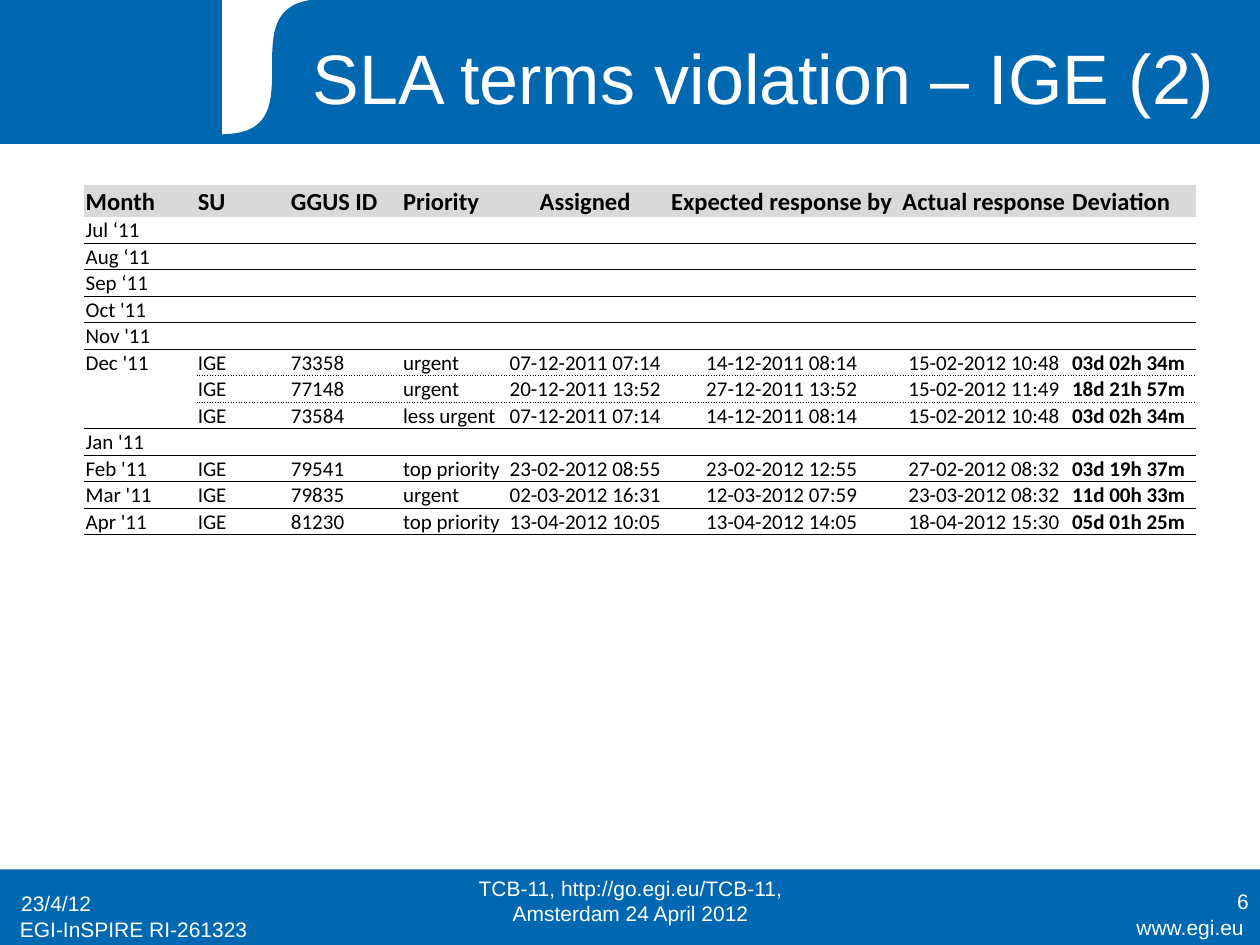
import pptx
import pptx.dml.color
import pptx.enum.text
import pptx.oxml.ns
import pptx.util
from lxml import etree
from pptx.enum.shapes import MSO_SHAPE
from pptx.util import Inches

BLUE = pptx.dml.color.RGBColor(0x00, 0x67, 0xB1)
WHITE = pptx.dml.color.RGBColor(0xFF, 0xFF, 0xFF)
BLACK = pptx.dml.color.RGBColor(0x00, 0x00, 0x00)
GREY = pptx.dml.color.RGBColor(0xD9, 0xD9, 0xD9)

ALIGN = pptx.enum.text.PP_ALIGN
ANCHOR = pptx.enum.text.MSO_ANCHOR
NO_STYLE = "{2D5ABB26-0587-4C30-8999-92F81FD0307C}"

COLUMN_WIDTHS = [0.89, 0.74, 0.89, 0.81, 1.29, 1.83, 1.38, 0.99]
CENTRED_COLUMNS = (4, 5, 6)
DEVIATION_COLUMN = 7
DOTTED_ROWS = (6, 7)  # rows of December that another ticket follows
VIOLATIONS = [
    ["Month", "SU", "GGUS ID", "Priority", "Assigned",
     "Expected response by", "Actual response", "Deviation"],
    ["Jul ‘11"],
    ["Aug ‘11"],
    ["Sep ‘11"],
    ["Oct '11"],
    ["Nov '11"],
    ["Dec '11", "IGE", "73358", "urgent", "07-12-2011 07:14",
     "14-12-2011 08:14", "15-02-2012 10:48", "03d 02h 34m"],
    ["", "IGE", "77148", "urgent", "20-12-2011 13:52",
     "27-12-2011 13:52", "15-02-2012 11:49", "18d 21h 57m"],
    ["", "IGE", "73584", "less urgent", "07-12-2011 07:14",
     "14-12-2011 08:14", "15-02-2012 10:48", "03d 02h 34m"],
    ["Jan '11"],
    ["Feb '11", "IGE", "79541", "top priority", "23-02-2012 08:55",
     "23-02-2012 12:55", "27-02-2012 08:32", "03d 19h 37m"],
    ["Mar '11", "IGE", "79835", "urgent", "02-03-2012 16:31",
     "12-03-2012 07:59", "23-03-2012 08:32", "11d 00h 33m"],
    ["Apr '11", "IGE", "81230", "top priority", "13-04-2012 10:05",
     "13-04-2012 14:05", "18-04-2012 15:30", "05d 01h 25m"],
]


def paint(shape, color):
    shape.shadow.inherit = False
    shape.fill.solid()
    shape.fill.fore_color.rgb = color
    shape.line.color.rgb = color
    shape.line.width = pptx.util.Pt(0.75)


def add_band(slide, left, top, width, height, color):
    band = slide.shapes.add_shape(
        MSO_SHAPE.RECTANGLE, Inches(left), Inches(top), Inches(width), Inches(height))
    paint(band, color)
    return band


def bezier(start, control1, control2, end, steps=40):
    for step in range(1, steps + 1):
        t = step / steps
        weights = ((1 - t) ** 3, 3 * t * (1 - t) ** 2, 3 * t ** 2 * (1 - t), t ** 3)
        yield tuple(sum(w * p[axis] for w, p in zip(weights, (start, control1, control2, end)))
                    for axis in (0, 1))


def add_header_curve(slide):
    left, right, bottom = 1.77, 3.74, 1.07
    curve = bezier((left, bottom), (2.56, bottom), (left, 0), (2.56, 0))
    outline = [(right, bottom), (left, bottom), *curve]
    builder = slide.shapes.build_freeform(Inches(right), 0, scale=1)
    builder.add_line_segments([(Inches(x), Inches(y)) for x, y in outline], close=True)
    paint(builder.convert_to_shape(), BLUE)


def add_run(paragraph, text, size, font, color, bold=False):
    run = paragraph.add_run()
    run.text = text
    run.font.size = pptx.util.Pt(size)
    run.font.name = font
    run.font.color.rgb = color
    run.font.bold = bold


def add_label(slide, text, left, top, width, height, align, size=12):
    frame = slide.shapes.add_textbox(
        Inches(left), Inches(top), Inches(width), Inches(height)).text_frame
    frame.word_wrap = True
    frame.vertical_anchor = ANCHOR.MIDDLE
    frame.paragraphs[0].alignment = align
    add_run(frame.paragraphs[0], text, size, "Arial", WHITE)


def add_bottom_border(cell, dash):
    properties = cell._tc.get_or_add_tcPr()
    line = etree.Element(pptx.oxml.ns.qn("a:lnB"), w=str(pptx.util.Pt(0.5)))
    fill = etree.SubElement(line, pptx.oxml.ns.qn("a:solidFill"))
    etree.SubElement(fill, pptx.oxml.ns.qn("a:srgbClr"), val=str(BLACK))
    etree.SubElement(line, pptx.oxml.ns.qn("a:prstDash"), val=dash)
    properties.insert(0, line)


def fill_cell(cell, text, row, column):
    is_header = row == 0
    cell.margin_left = cell.margin_right = cell.margin_top = Inches(0.01)
    cell.margin_bottom = 0
    cell.vertical_anchor = ANCHOR.MIDDLE if row < 5 else ANCHOR.BOTTOM
    paragraph = cell.text_frame.paragraphs[0]
    paragraph.alignment = ALIGN.CENTER if column in CENTRED_COLUMNS else ALIGN.LEFT
    if text:
        add_run(paragraph, text, 14 if is_header else 12, "Calibri", BLACK,
                bold=is_header or column == DEVIATION_COLUMN)
    else:
        # Keeps empty cells as low as the filled ones
        etree.SubElement(paragraph._p, pptx.oxml.ns.qn("a:endParaRPr"), sz="1200")

    if is_header:
        cell.fill.solid()
        cell.fill.fore_color.rgb = GREY
        return
    cell.fill.background()
    if row not in DOTTED_ROWS:
        add_bottom_border(cell, "solid")
    elif column > 0:
        add_bottom_border(cell, "sysDot")


def add_violations_table(slide):
    table = slide.shapes.add_table(
        len(VIOLATIONS), len(COLUMN_WIDTHS),
        Inches(0.67), Inches(1.47), Inches(8.83), Inches(2.81)).table
    table.first_row = table.horz_banding = False
    table._tbl.tblPr.find(pptx.oxml.ns.qn("a:tableStyleId")).text = NO_STYLE
    for column, width in zip(table.columns, COLUMN_WIDTHS):
        column.width = Inches(width)
    for row, entries in enumerate(VIOLATIONS):
        table.rows[row].height = Inches(0.21 if row else 0.25)
        for column in range(len(COLUMN_WIDTHS)):
            text = entries[column] if column < len(entries) else ""
            fill_cell(table.cell(row, column), text, row, column)


def main():
    presentation = pptx.Presentation()
    presentation.slide_width = Inches(10)
    presentation.slide_height = Inches(7.5)
    slide = presentation.slides.add_slide(presentation.slide_layouts[6])

    # Footer and header bands
    footer_band = add_band(slide, 0, 6.9, 10, 0.6, BLUE)
    footer_band.line.fill.background()
    add_band(slide, 0, 0, 10, 1.14, BLUE)
    add_band(slide, 1.77, 0, 1.97, 1.07, WHITE)
    add_header_curve(slide)

    # Title
    add_label(slide, "SLA terms violation – IGE (2)", 2.32, 0.13, 7.48, 0.95, ALIGN.CENTER, 40)

    # Footer texts
    add_label(slide, "www.egi.eu", 8.39, 7.2, 1.58, 0.31, ALIGN.RIGHT)
    add_label(slide, "EGI-InSPIRE RI-261323", 0.06, 7.22, 2.5, 0.31, ALIGN.LEFT)
    add_label(slide, "23/4/12", 0.07, 6.97, 2.33, 0.4, ALIGN.LEFT)
    add_label(slide, "TCB-11, http://go.egi.eu/TCB-11, Amsterdam 24 April 2012",
              3.42, 6.95, 3.17, 0.4, ALIGN.CENTER)
    add_label(slide, "6", 7.68, 6.95, 2.33, 0.4, ALIGN.RIGHT)

    # Late responses by month
    add_violations_table(slide)

    presentation.save("out.pptx")


if __name__ == "__main__":
    main()
